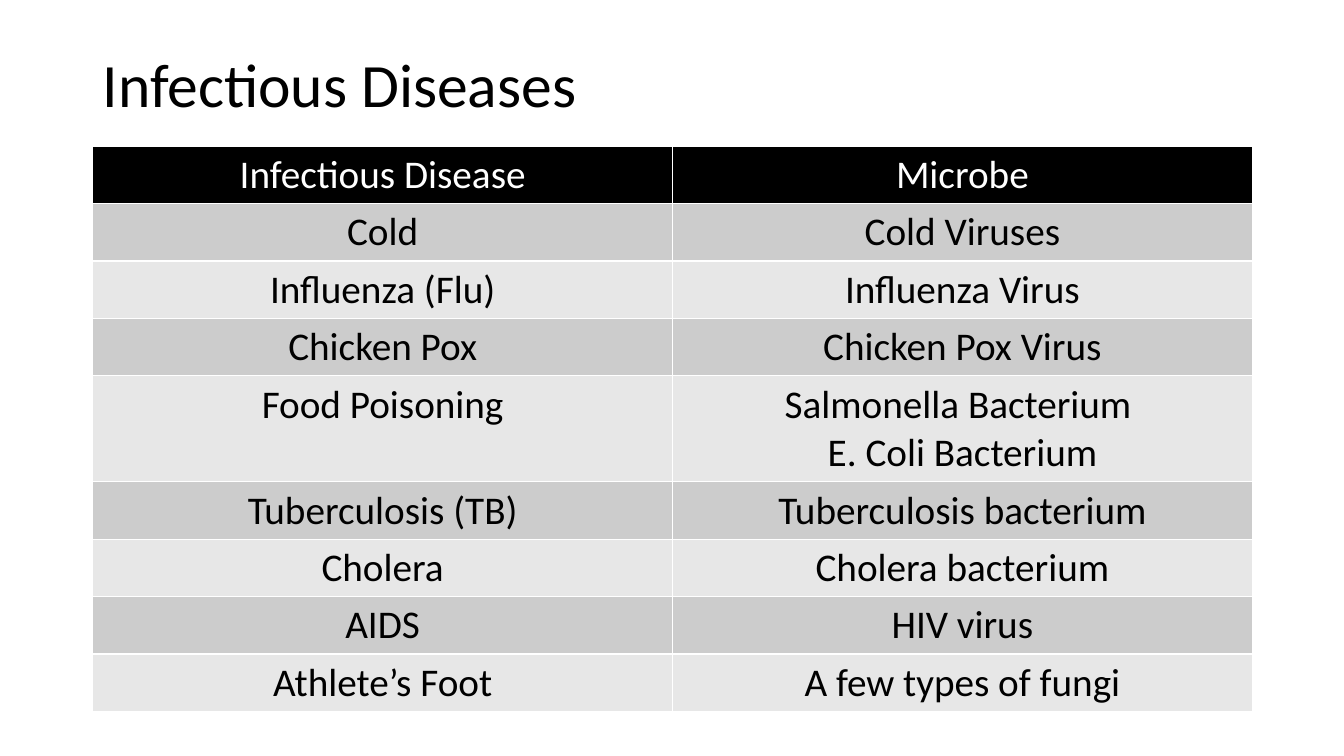
from lxml.etree import SubElement
from pptx import Presentation
from pptx.dml.color import RGBColor
from pptx.enum.text import MSO_ANCHOR, PP_ALIGN
from pptx.oxml.ns import qn
from pptx.util import Inches, Pt

FONT = "Calibri"
BLACK = RGBColor(0x00, 0x00, 0x00)
WHITE = RGBColor(0xFF, 0xFF, 0xFF)
DARK_BAND = RGBColor(0xCC, 0xCC, 0xCC)
LIGHT_BAND = RGBColor(0xE7, 0xE7, 0xE7)

LINE_HEIGHT = 0.48
ROW_PADDING = 0.09

# Each cell is a list of lines
HEADER = (["Infectious Disease"], ["Microbe"])
DISEASES = [
    (["Cold"], ["Cold Viruses"]),
    (["Influenza (Flu)"], ["Influenza Virus"]),
    (["Chicken Pox"], ["Chicken Pox Virus"]),
    (["Food Poisoning"], ["Salmonella Bacterium ", "E. Coli Bacterium"]),
    (["Tuberculosis (TB)"], ["Tuberculosis bacterium"]),
    (["Cholera"], ["Cholera bacterium"]),
    (["AIDS"], ["HIV virus"]),
    (["Athlete’s Foot"], ["A few types of fungi"]),
]


def add_run(paragraph, text, size, color):
    run = paragraph.add_run()
    run.text = text
    run.font.name = FONT
    run.font.size = Pt(size)
    run.font.bold = False
    run.font.color.rgb = color


def add_title(slide, left, top, width, height, text):
    title = slide.shapes.add_textbox(
        Inches(left), Inches(top), Inches(width), Inches(height))
    frame = title.text_frame
    frame.word_wrap = True
    frame.vertical_anchor = MSO_ANCHOR.MIDDLE
    paragraph = frame.paragraphs[0]
    paragraph.line_spacing = 0.9
    add_run(paragraph, text, 44, BLACK)


def add_borders(cell):
    properties = cell._tc.get_or_add_tcPr()
    for side in ("a:lnL", "a:lnR", "a:lnT", "a:lnB"):
        border = SubElement(properties, qn(side), w=str(Pt(1)))
        fill = SubElement(border, qn("a:solidFill"))
        SubElement(fill, qn("a:srgbClr"), val=str(WHITE))


def fill_cell(cell, lines, fill_color, text_color):
    add_borders(cell)
    cell.fill.solid()
    cell.fill.fore_color.rgb = fill_color
    frame = cell.text_frame
    for index, line in enumerate(lines):
        paragraph = frame.add_paragraph() if index else frame.paragraphs[0]
        paragraph.alignment = PP_ALIGN.CENTER
        add_run(paragraph, line, 28, text_color)


def add_disease_table(slide, left, top, width, height):
    rows = [HEADER, *DISEASES]
    table = slide.shapes.add_table(
        len(rows), len(HEADER), Inches(left), Inches(top),
        Inches(width), Inches(height)).table
    for column in table.columns:
        column.width = Inches(width / len(HEADER))
    for row_index, row in enumerate(rows):
        line_count = max(len(lines) for lines in row)
        table.rows[row_index].height = Inches(
            line_count * LINE_HEIGHT + ROW_PADDING)
        if row_index == 0:
            fill_color, text_color = BLACK, WHITE
        else:
            fill_color = DARK_BAND if row_index % 2 else LIGHT_BAND
            text_color = BLACK
        for column_index, lines in enumerate(row):
            fill_cell(table.cell(row_index, column_index), lines,
                      fill_color, text_color)


def main():
    presentation = Presentation()
    presentation.slide_width = Inches(13.33)
    presentation.slide_height = Inches(7.5)
    slide = presentation.slides.add_slide(presentation.slide_layouts[6])
    add_title(slide, 0.92, 0.14, 11.5, 1.45, "Infectious Diseases")
    add_disease_table(slide, 0.92, 1.45, 11.5, 5.57)
    presentation.save("out.pptx")


if __name__ == "__main__":
    main()
